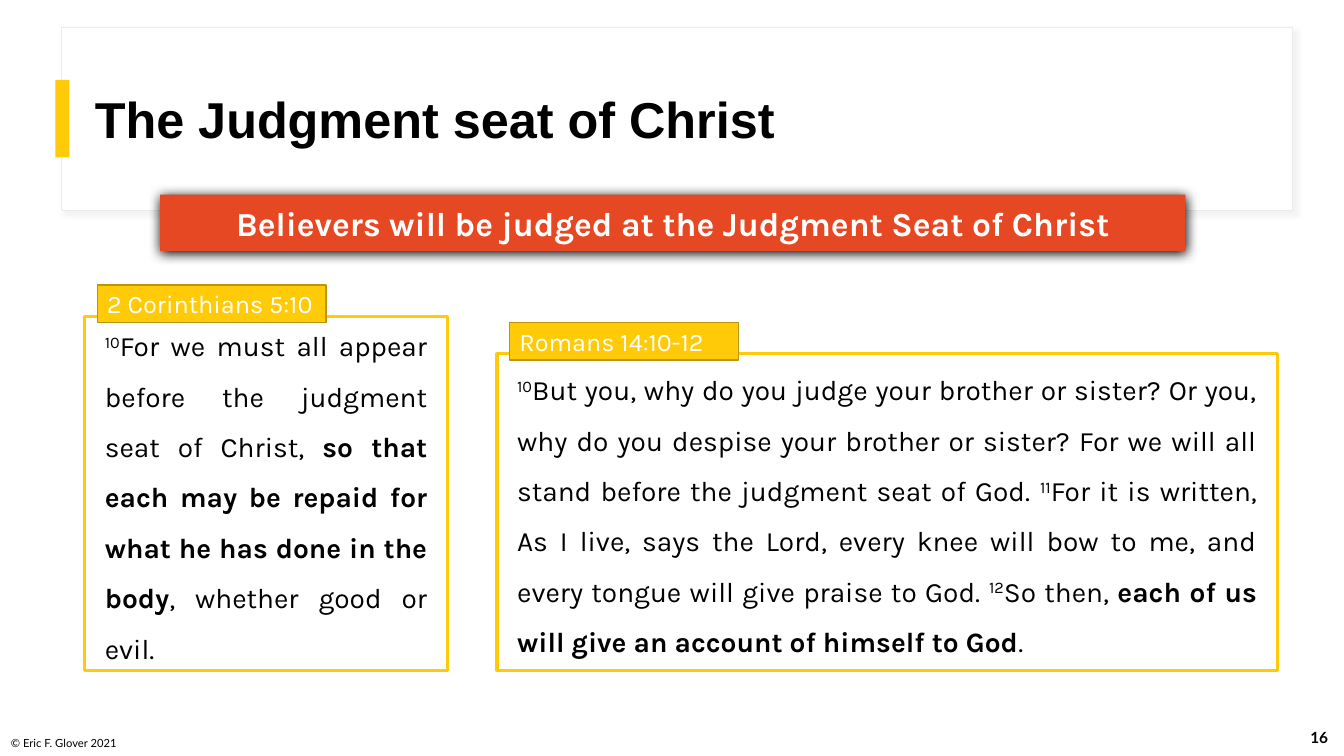
import dataclasses

import lxml.etree
import pptx
import pptx.dml.color
import pptx.enum.shapes
import pptx.enum.text
import pptx.oxml.ns
import pptx.util

Pt = pptx.util.Pt
ALIGN = pptx.enum.text.PP_ALIGN
ANCHOR = pptx.enum.text.MSO_ANCHOR


@dataclasses.dataclass(frozen=True)
class Theme:
    white: str = "FFFFFF"
    black: str = "000000"
    yellow: str = "FFCA08"
    dark_yellow: str = "BD9506"
    red: str = "E64823"
    panel_line: str = "EEEAE7"
    panel_shadow: str = "D9D9D9"
    heading_font: str = "Arial"
    body_font: str = "Karla"
    footer_font: str = "Lato"
    title_size: float = 36
    banner_size: float = 24
    passage_size: float = 20
    label_size: float = 18
    number_size: float = 11
    footer_size: float = 8


THEME = Theme()


def rgb(color):
    return pptx.dml.color.RGBColor.from_string(color)


def format_run(run, font, size, color, bold=False):
    run.font.name = font
    run.font.size = Pt(size)
    run.font.color.rgb = rgb(color)
    run.font.bold = bold


def set_frame(text_frame, anchor, margins=(7.2, 3.6, 7.2, 3.6)):
    """Margins are left, top, right, bottom in points."""
    text_frame.word_wrap = True
    text_frame.auto_size = pptx.enum.text.MSO_AUTO_SIZE.NONE
    text_frame.vertical_anchor = anchor
    (text_frame.margin_left, text_frame.margin_top,
     text_frame.margin_right, text_frame.margin_bottom) = map(Pt, margins)


def set_line_of_text(shape, text, font, size, color, bold=False,
                     align=ALIGN.LEFT, anchor=ANCHOR.MIDDLE):
    set_frame(shape.text_frame, anchor)
    shape.text_frame.text = text
    paragraph = shape.text_frame.paragraphs[0]
    paragraph.alignment = align
    format_run(paragraph.runs[0], font, size, color, bold)
    return paragraph


def add_rectangle(slide, box, fill, line=None, line_width=1):
    shape = slide.shapes.add_shape(
        pptx.enum.shapes.MSO_SHAPE.RECTANGLE, *map(Pt, box))
    shape.shadow.inherit = False
    shape.fill.solid()
    shape.fill.fore_color.rgb = rgb(fill)
    if line:
        shape.line.color.rgb = rgb(line)
        shape.line.width = Pt(line_width)
    else:
        shape.line.fill.background()
    return shape


def add_shadow(shape, color, opacity, blur, distance, angle):
    qn = pptx.oxml.ns.qn
    effects = shape.element.spPr.find(qn("a:effectLst"))
    shadow = lxml.etree.SubElement(
        effects, qn("a:outerShdw"), blurRad=str(Pt(blur)),
        dist=str(Pt(distance)), dir=str(angle * 60000), rotWithShape="0")
    tint = lxml.etree.SubElement(shadow, qn("a:srgbClr"), val=color)
    lxml.etree.SubElement(tint, qn("a:alpha"), val=str(opacity * 1000))


def add_header(slide, box, title_text):
    left, top, width, height = box
    panel = add_rectangle(slide, box, THEME.white, THEME.panel_line, 0.75)
    add_shadow(panel, THEME.panel_shadow, 30, 4, 3, 45)
    add_rectangle(slide, (left - 4.5, top + 37.5, 10, 55.5), THEME.yellow)

    title = slide.shapes.title
    title.left, title.top = Pt(left + 16.5), Pt(top + 21)
    title.width, title.height = Pt(800.5), Pt(93)
    paragraph = set_line_of_text(title, title_text, THEME.heading_font,
                                 THEME.title_size, THEME.black, bold=True)
    paragraph.line_spacing = 0.9
    # The title placeholder has to stand in front of the panel.
    panel.element.getparent().append(title.element)


def add_banner(slide, box, text):
    banner = add_rectangle(slide, box, THEME.red)
    add_shadow(banner, THEME.black, 100, 8.5, 1, 90)
    paragraph = set_line_of_text(banner, text, THEME.body_font, THEME.banner_size,
                                 THEME.white, bold=True, align=ALIGN.CENTER)
    paragraph.space_after = Pt(12)


def add_passage(slide, box, reference, pieces):
    """Pieces are (text, style) pairs; the style is "verse", "plain" or "bold"."""
    left, top = box[:2]
    frame = add_rectangle(slide, box, THEME.white, THEME.yellow, 2.25)
    set_frame(frame.text_frame, ANCHOR.MIDDLE, (14.4, 0, 14.4, 7.2))
    paragraph = frame.text_frame.paragraphs[0]
    paragraph.alignment = ALIGN.JUSTIFY
    paragraph.line_spacing = 1.5
    paragraph.space_before = Pt(18)
    paragraph.space_after = Pt(12)
    for text, style in pieces:
        run = paragraph.add_run()
        run.text = text
        format_run(run, THEME.body_font, THEME.passage_size, THEME.black,
                   style == "bold")
        if style == "verse":
            run.font._element.set("baseline", "30000")

    label = add_rectangle(slide, (left + 9, top - 22.3, 163.5, 26.6),
                          THEME.yellow, THEME.dark_yellow)
    set_line_of_text(label, reference, THEME.body_font, THEME.label_size,
                     THEME.white)


def add_footer(slide, box, credit, number):
    left, top, width, height = box
    credit_box = slide.shapes.add_textbox(
        Pt(left), Pt(top + 7), Pt(113), Pt(20))
    set_line_of_text(credit_box, credit, THEME.footer_font, THEME.footer_size,
                     THEME.black, anchor=ANCHOR.BOTTOM)
    number_box = slide.shapes.add_textbox(
        Pt(left + width - 35.3), Pt(top), Pt(35.3), Pt(29))
    paragraph = set_line_of_text(number_box, number, THEME.footer_font,
                                 THEME.number_size, THEME.black, bold=True,
                                 align=ALIGN.CENTER)
    paragraph.space_after = Pt(6)


def main():
    presentation = pptx.Presentation()
    presentation.slide_width, presentation.slide_height = Pt(960), Pt(540)
    slide = presentation.slides.add_slide(presentation.slide_layouts[5])

    add_footer(slide, (0.7, 512, 959.3, 28), "© Eric F. Glover 2021", "16")
    add_header(slide, (44, 19.5, 879, 131), "The Judgment seat of Christ")
    add_passage(slide, (60.5, 226, 259.2, 252.8), "2 Corinthians 5:10", [
        ("10", "verse"),
        ("For we must all appear before the judgment seat of Christ, ", "plain"),
        ("so that each may be repaid for what he has done in the body", "bold"),
        (", whether good or evil.", "plain"),
    ])
    add_passage(slide, (355, 252.8, 557.3, 226), "Romans 14:10-12", [
        ("10", "verse"),
        ("But you, why do you judge your brother or sister? Or you, why do you "
         "despise your brother or sister? For we will all stand before the "
         "judgment seat of God. ", "plain"),
        ("11", "verse"),
        ("For it is written, As I live, says the Lord, every knee will bow to "
         "me, and every tongue will give praise to God. ", "plain"),
        ("12", "verse"),
        ("So then, ", "plain"),
        ("each of us will give an account of himself to God", "bold"),
        (".", "plain"),
    ])
    add_banner(slide, (114.5, 139, 732.2, 40.3),
               "Believers will be judged at the Judgment Seat of Christ")
    presentation.save("out.pptx")


if __name__ == "__main__":
    main()
